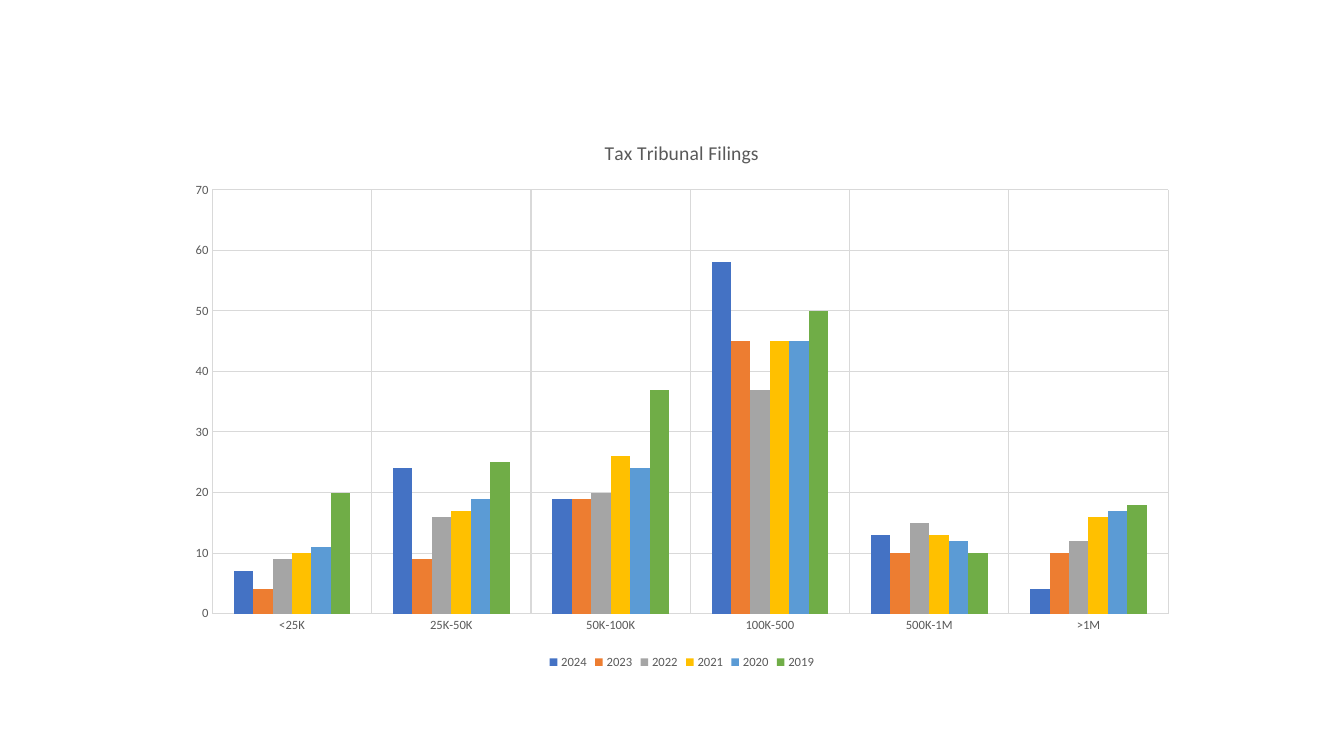
from pptx import Presentation
from pptx.chart.data import CategoryChartData
from pptx.dml.color import RGBColor
from pptx.enum import chart as ch
from pptx.util import Cm, Pt

GREY, GRID = "595959", "D9D9D9"
BRACKETS = ["<25K", "25K-50K", "50K-100K", "100K-500", "500K-1M", ">1M"]
FILINGS = [
    ("2024", "4472C4", (7, 24, 19, 58, 13, 4)),
    ("2023", "ED7D31", (4, 9, 19, 45, 10, 10)),
    ("2022", "A5A5A5", (9, 16, 20, 37, 15, 12)),
    ("2021", "FFC000", (10, 17, 26, 45, 13, 16)),
    ("2020", "5B9BD5", (11, 19, 24, 45, 12, 17)),
    ("2019", "70AD47", (20, 25, 37, 50, 10, 18)),
]


def rgb(value):
    return RGBColor.from_string(value)


def set_font(font, size, color=GREY):
    font.name = "Calibri"
    font.size = Pt(size)
    font.bold = False
    font.color.rgb = rgb(color)


def set_line(line):
    line.color.rgb = rgb(GRID)
    line.width = Pt(0.75)


def style_axis(axis):
    axis.major_tick_mark = axis.minor_tick_mark = ch.XL_TICK_MARK.NONE
    axis.has_major_gridlines = True
    set_line(axis.major_gridlines.format.line)
    set_font(axis.tick_labels.font, 9)


def add_column_chart(s, left, top, width, height):
    data = CategoryChartData()
    data.categories = BRACKETS
    for year, _, counts in FILINGS:
        data.add_series(year, counts)
    chart = s.shapes.add_chart(ch.XL_CHART_TYPE.COLUMN_CLUSTERED,
                               left, top, width, height, data).chart
    set_font(chart.font, 10, "000000")
    plot = chart.plots[0]
    plot.gap_width = 219
    plot.overlap = 0
    plot.vary_by_categories = False
    for series, (_, color, _) in zip(plot.series, FILINGS):
        series.format.fill.solid()
        series.format.fill.fore_color.rgb = rgb(color)
    return chart


def add_title(chart, title):
    chart.has_title = True
    chart.chart_title.include_in_layout = False
    p = chart.chart_title.text_frame.paragraphs[0]
    p.text = title
    set_font(p.font, 14)


def add_legend(chart):
    chart.has_legend = True
    chart.legend.position = ch.XL_LEGEND_POSITION.BOTTOM
    chart.legend.include_in_layout = False
    set_font(chart.legend.font, 9)


def main():
    prs = Presentation()
    prs.slide_width, prs.slide_height = Cm(33.87), Cm(19.05)
    s = prs.slides.add_slide(prs.slide_layouts[6])
    chart = add_column_chart(s, Cm(4.42), Cm(3), Cm(25.53), Cm(13.97))
    add_title(chart, "Tax Tribunal Filings")
    add_legend(chart)
    style_axis(chart.category_axis)
    set_line(chart.category_axis.format.line)
    style_axis(chart.value_axis)
    chart.value_axis.format.line.fill.background()
    chart.value_axis.minimum_scale = 0
    chart.value_axis.maximum_scale = 70
    chart.value_axis.major_unit = 10
    prs.save("out.pptx")


if __name__ == "__main__":
    main()
